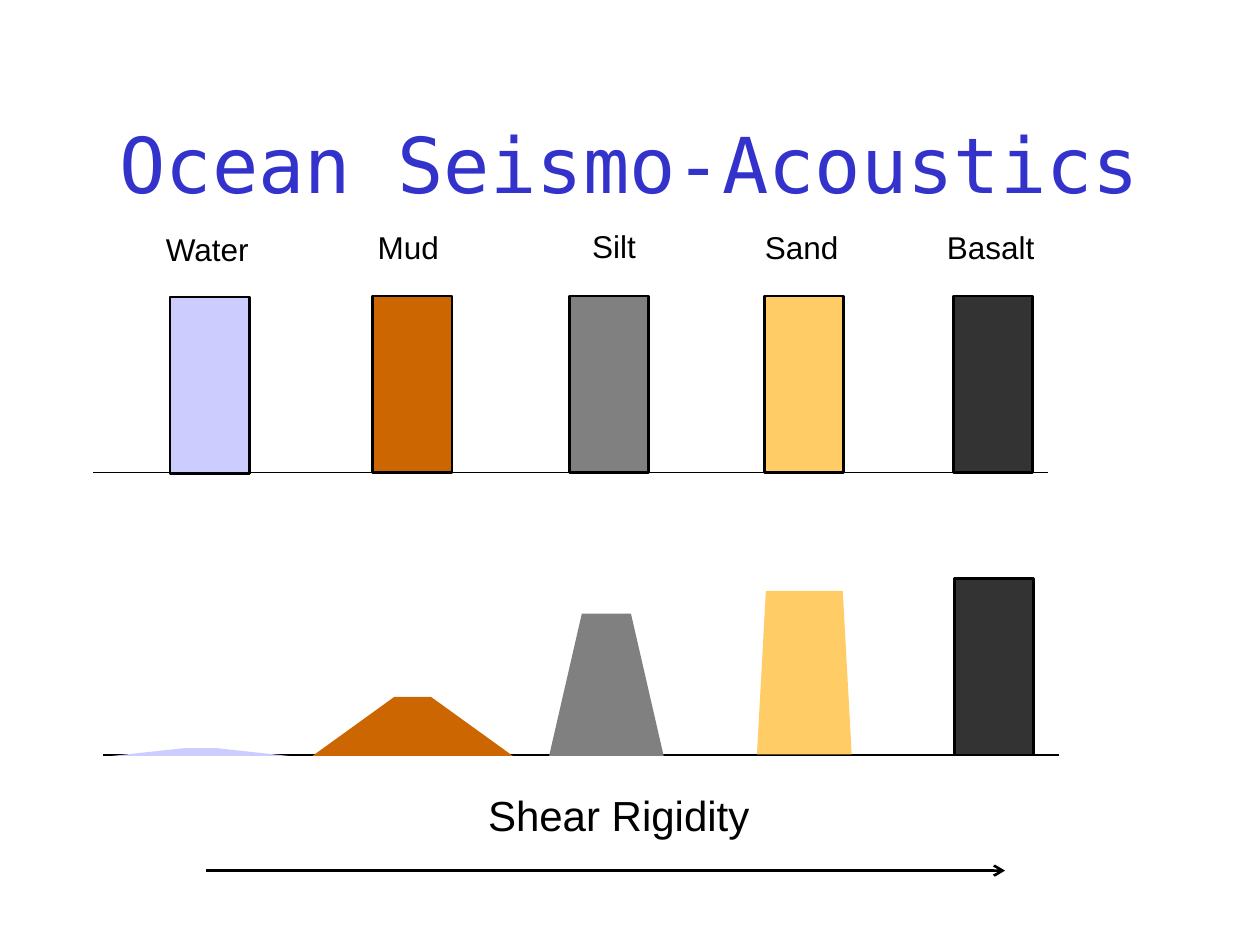
import pptx
import pptx.util
import pptx.dml.color
import pptx.enum.shapes
import pptx.enum.text
import pptx.oxml.ns
import lxml.etree

Cm = pptx.util.Cm
Pt = pptx.util.Pt
RGBColor = pptx.dml.color.RGBColor
Align = pptx.enum.text.PP_ALIGN
Anchor = pptx.enum.text.MSO_ANCHOR
Kind = pptx.enum.shapes.MSO_SHAPE
qn = pptx.oxml.ns.qn

BLACK = RGBColor(0x00, 0x00, 0x00)
BLUE = RGBColor(0x33, 0x33, 0xCC)
WATER = RGBColor(0xCC, 0xCC, 0xFF)
MUD = RGBColor(0xCC, 0x66, 0x00)
SILT = RGBColor(0x80, 0x80, 0x80)
SAND = RGBColor(0xFF, 0xCC, 0x66)
BASALT = RGBColor(0x33, 0x33, 0x33)

deck = pptx.Presentation()
deck.slide_width = Cm(25.4)
deck.slide_height = Cm(19.05)
slide = deck.slides.add_slide(deck.slide_layouts[6])
shapes = slide.shapes


def add_text(text, left, top, width, height, size=18, font="Arial",
             color=BLACK, align=Align.CENTER, anchor=Anchor.TOP, wrap=False):
    box = shapes.add_textbox(Cm(left), Cm(top), Cm(width), Cm(height))
    frame = box.text_frame
    frame.word_wrap = wrap
    frame.vertical_anchor = anchor
    if not wrap:
        frame.auto_size = pptx.enum.text.MSO_AUTO_SIZE.SHAPE_TO_FIT_TEXT
    para = frame.paragraphs[0]
    para.alignment = align
    run = para.add_run()
    run.text = text
    run.font.size = Pt(size)
    run.font.name = font
    run.font.color.rgb = color


add_text("Ocean Seismo-Acoustics", 1.9, 1.7, 21.6, 3.18, size=44,
         font="DejaVu Sans Mono", color=BLUE, anchor=Anchor.MIDDLE, wrap=True)

bars = [
    (3.43, 5.99, WATER),
    (7.51, 5.97, MUD),
    (11.48, 5.97, SILT),
    (15.41, 5.97, SAND),
    (19.22, 5.97, BASALT),
    (19.24, 11.66, BASALT),
]
for left, top, color in bars:
    bar = shapes.add_shape(Kind.RECTANGLE, Cm(left), Cm(top), Cm(1.6), Cm(3.56))
    bar.shadow.inherit = False
    bar.fill.solid()
    bar.fill.fore_color.rgb = color
    bar.line.color.rgb = BLACK
    bar.line.width = Pt(1.5)

labels = [
    ("Water", 3.02, 4.51, 2.32),
    ("Mud", 7.31, 4.47, 1.84),
    ("Silt", 11.63, 4.45, 1.5),
    ("Sand", 15.11, 4.47, 2.1),
    ("Basalt", 18.77, 4.47, 2.4),
]
for name, left, top, width in labels:
    add_text(name, left, top, width, 1.02)

lines = [
    (1.88, 21.13, 9.53, 0.75, False),
    (2.08, 21.34, 15.22, 0.75, False),
    (4.16, 20.26, 17.55, 1.5, True),
]
for start, end, level, weight, arrow in lines:
    line = shapes.add_connector(pptx.enum.shapes.MSO_CONNECTOR.STRAIGHT,
                                Cm(start), Cm(level), Cm(end), Cm(level))
    line.line.color.rgb = BLACK
    line.line.width = Pt(weight)
    props = line._element.spPr
    if arrow:
        tail = lxml.etree.SubElement(props.find(qn("a:ln")), qn("a:tailEnd"))
        tail.set("type", "arrow")
    lxml.etree.SubElement(props, qn("a:effectLst"))

heaps = [
    (15.26, 17.17, 0.18, 11.91, 15.21, SAND),
    (11.07, 13.38, 0.66, 12.37, 15.24, SILT),
    (6.3, 10.34, 1.65, 14.05, 15.24, MUD),
    (2.26, 5.82, 1.48, 15.08, 15.24, WATER),
]
for left, right, inset, top, base, color in heaps:
    pen = shapes.build_freeform(Cm(left), Cm(base))
    pen.add_line_segments([
        (Cm(left + inset), Cm(top)),
        (Cm(right - inset), Cm(top)),
        (Cm(right), Cm(base)),
    ], close=True)
    heap = pen.convert_to_shape()
    heap.shadow.inherit = False
    heap.fill.solid()
    heap.fill.fore_color.rgb = color
    heap.line.fill.background()

add_text("Shear Rigidity", 9.5, 15.8, 5.86, 1.27, size=24, align=Align.RIGHT)

deck.save("out.pptx")
